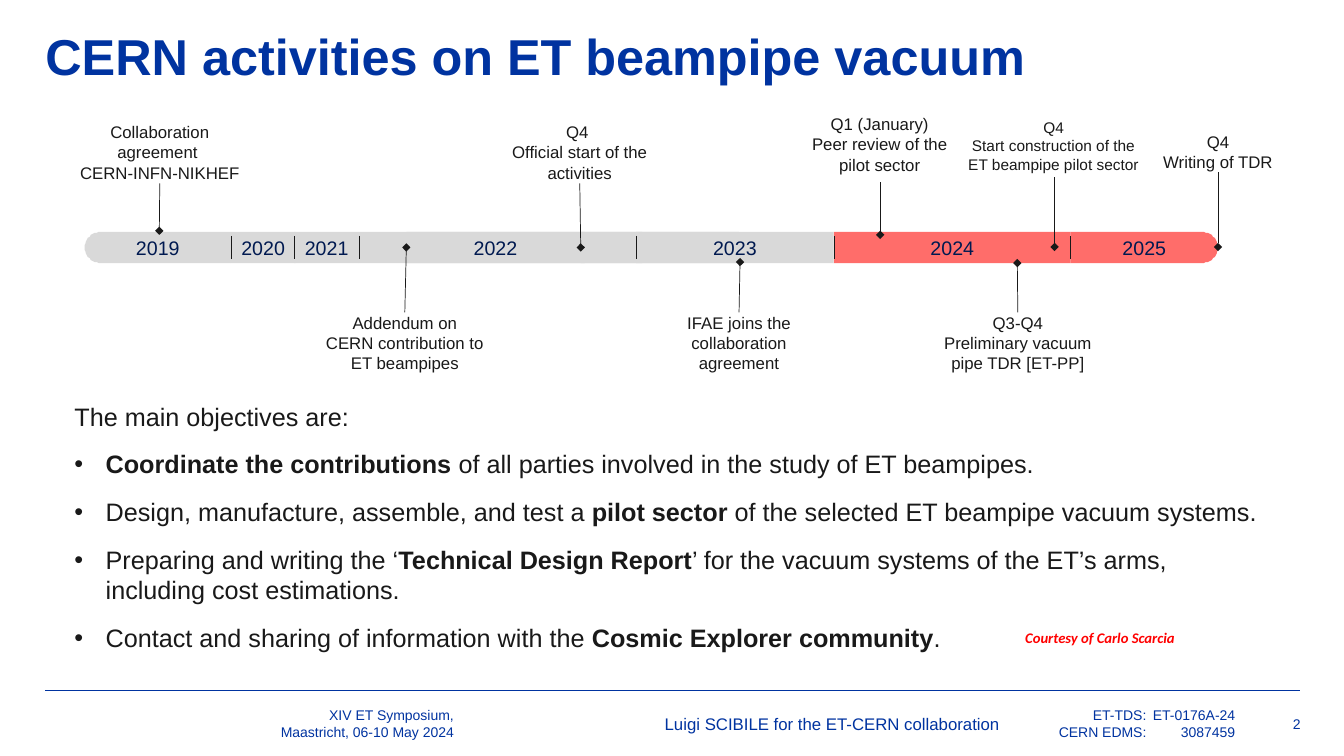
from math import cos, pi, sin

from lxml import etree
from pptx import Presentation
from pptx.dml.color import RGBColor
from pptx.enum.shapes import MSO_CONNECTOR, MSO_SHAPE
from pptx.enum.text import MSO_ANCHOR, PP_ALIGN
from pptx.oxml.ns import qn
from pptx.util import Emu, Pt

LEFT, CENTER, RIGHT = PP_ALIGN.LEFT, PP_ALIGN.CENTER, PP_ALIGN.RIGHT
TOP, MIDDLE = MSO_ANCHOR.TOP, MSO_ANCHOR.MIDDLE
STRAIGHT, RECT = MSO_CONNECTOR.STRAIGHT, MSO_SHAPE.RECTANGLE
PX = 9144  # 100 px to the inch
COLORS = {"blue": "0033A0", "navy": "001950", "text": "191919",
          "past": "D9D9D9", "ahead": "FF6D6A", "credit": "FF0000"}

prs = Presentation()
prs.slide_width, prs.slide_height = Emu(1333 * PX), Emu(750 * PX)
s = prs.slides.add_slide(prs.slide_layouts[6])


def write(sp, lines, size, color, align=LEFT, anchor=TOP, inset=(0, 0)):
    """Fill a shape or a new box (left, top, width, height); ** toggles bold."""
    if isinstance(sp, tuple):
        sp = s.shapes.add_textbox(*[Emu(v * PX) for v in sp])
    tf = sp.text_frame
    tf.word_wrap = True
    tf.vertical_anchor = anchor
    tf.margin_left = tf.margin_right = Emu(inset[0] * PX)
    tf.margin_top = tf.margin_bottom = Emu(inset[1] * PX)
    for i, line in enumerate(lines):
        p = tf.paragraphs[0] if i == 0 else tf.add_paragraph()
        p.alignment = align
        for j, part in enumerate(line.split("**")):
            if part:
                r = p.add_run()
                r.text = part
                r.font.name, r.font.size, r.font.bold = "Arial", Pt(size), j % 2 == 1
                r.font.color.rgb = RGBColor.from_string(COLORS[color])
    return sp


def add_line(x1, y1, x2, y2, color, width, diamond=False):
    ln = s.shapes.add_connector(STRAIGHT, *[Emu(v * PX) for v in (x1, y1, x2, y2)])
    ln.line.color.rgb = RGBColor.from_string(COLORS[color])
    ln.line.width = Pt(width)
    if diamond:
        etree.SubElement(ln.line._ln, qn("a:headEnd"), type="diamond")
    etree.SubElement(ln._element.spPr, qn("a:effectLst"))
    return ln


# Title and footer
title = write((45, 32, 1244, 51), ["**CERN activities on ET beampipe vacuum**"], 36, "blue")
title.text_frame.paragraphs[0].line_spacing = 0.9
add_line(45, 685, 1289, 685, "blue", 0.75)
write((273, 698, 177, 40), ["XIV ET Symposium, Maastricht, 06-10 May 2024"],
      10, "blue", RIGHT, MIDDLE)
write((466, 698, 719, 40), ["Luigi SCIBILE for the ET-CERN collaboration"],
      12, "blue", CENTER, MIDDLE, (10, 5))
write((1215, 698, 75, 40), ["2"], 10, "blue", RIGHT, MIDDLE)
references = write((1005, 698, 225, 40),
                   ["\tET-TDS:\tET-0176A-24", "\tCERN EDMS:\t3087459"],
                   10, "blue", LEFT, MIDDLE)
for p in references.text_frame.paragraphs:
    tabs = etree.SubElement(p._p.get_or_add_pPr(), qn("a:tabLst"))
    for pos in (132, 220):
        etree.SubElement(tabs, qn("a:tab"), pos=str(pos * PX), algn="r")

# Objectives
objectives = write((64, 393, 1206, 260), [
    "The main objectives are:",
    "**Coordinate the contributions **of all parties involved in the study of ET beampipes.",
    "Design, manufacture, assemble, and test a **pilot sector** of the selected ET beampipe "
    "vacuum systems.",
    "Preparing and writing the ‘**Technical Design Report**’ for the vacuum systems of the "
    "ET’s arms, including cost estimations.",
    "Contact and sharing of information with the **Cosmic Explorer community**.",
], 18, "text", inset=(10, 5))
for p in objectives.text_frame.paragraphs[1:]:
    pPr = p._p.get_or_add_pPr()
    pPr.set("marL", str(31 * PX))
    pPr.set("indent", str(-31 * PX))
    etree.SubElement(pPr, qn("a:buFont"), typeface="Arial")
    etree.SubElement(pPr, qn("a:buChar"), char="•")
    p.space_before = Pt(12.5)

# Timeline bar: left, width, year, colour, side that is rounded (-1 left, 1 right)
BAR_TOP, BAR_H, CAP = 230, 31, 16
segments = [
    (84, 145, "2019", "past", -1), (229, 64, "2020", "past", 0),
    (356, 281, "", "past", 0), (292, 64, "2021", "past", 0),
    (827, 235, "2024", "ahead", 0), (576, 157, "", "past", 0),
    (631, 196, "2023", "past", 0), (403, 177, "2022", "past", 0),
    (1062, 146, "2025", "ahead", 1),
]
bars = {}
for left, width, year, color, side in segments:
    if side:
        flat, tip = (left, left + width) if side > 0 else (left + width, left)
        cap = [(tip + side * CAP * (cos(a) - 1), BAR_TOP + BAR_H / 2 * (1 + sin(a)))
               for a in (pi * (k / 24 - 0.5) for k in range(25))]
        outline = s.shapes.build_freeform(flat, BAR_TOP, scale=PX)
        outline.add_line_segments(cap + [(flat, BAR_TOP + BAR_H)], close=True)
        sp = outline.convert_to_shape()
    else:
        sp = s.shapes.add_shape(RECT, *[Emu(v * PX) for v in (left, BAR_TOP, width, BAR_H)])
    sp.shadow.inherit = False
    sp.fill.solid()
    sp.fill.fore_color.rgb = RGBColor.from_string(COLORS[color])
    sp.line.fill.background()
    if year:
        write(sp, [year], 14, "navy", CENTER, MIDDLE, (10, 5))
    bars[left] = sp

for x in (229, 292, 356, 631, 828, 1062):
    add_line(x, 234, x, 257, "text", 0.5)

# Milestones: label box, size, lines, marker point, label end (None joins the label),
# bar whose left side holds the marker
milestones = [
    ((69, 121, 179, 61), 12, ["Collaboration", "agreement ", "CERN-INFN-NIKHEF"],
     (158, 229), None, None),
    ((312, 310, 179, 61), 12, ["Addendum on", "CERN contribution to ET beampipes"],
     (403, 246), None, 403),
    ((503, 121, 144, 61), 12, ["Q4 ", "Official start of the activities"],
     (576, 246), None, 576),
    ((661, 310, 144, 61), 12, ["IFAE joins the collaboration agreement"],
     (734, 260), None, None),
    ((788, 113, 169, 61), 12, ["Q1 (January)", "Peer review of the pilot sector"],
     (873, 233), 181, None),
    ((925, 310, 169, 61), 12, ["Q3-Q4", "Preliminary vacuum pipe TDR [ET-PP]"],
     (1009, 261), None, None),
    ((956, 117, 178, 56), 11, ["Q4", "Start construction of the ET beampipe pilot sector"],
     (1046, 245), 176, None),
    ((1152, 131, 112, 40), 12, ["Q4", "Writing of TDR"], (1208, 245), None, None),
]
for box, size, lines, (x, y), end, bar in milestones:
    label = write(box, lines, size, "text", CENTER)
    ln = add_line(x, y, x, end or box[1], "text", 0.5, diamond=True)
    if end is None:
        ln.end_connect(label, 0 if box[1] > y else 2)
    if bar:
        ln.begin_connect(bars[bar], 1)

credit = write((1007, 619, 208, 28), ["**Courtesy of Carlo Scarcia**"],
               10.5, "credit", LEFT, MIDDLE, (10, 5))
font = credit.text_frame.paragraphs[0].runs[0].font
font.name, font.italic = "Calibri", True

prs.save("out.pptx")
